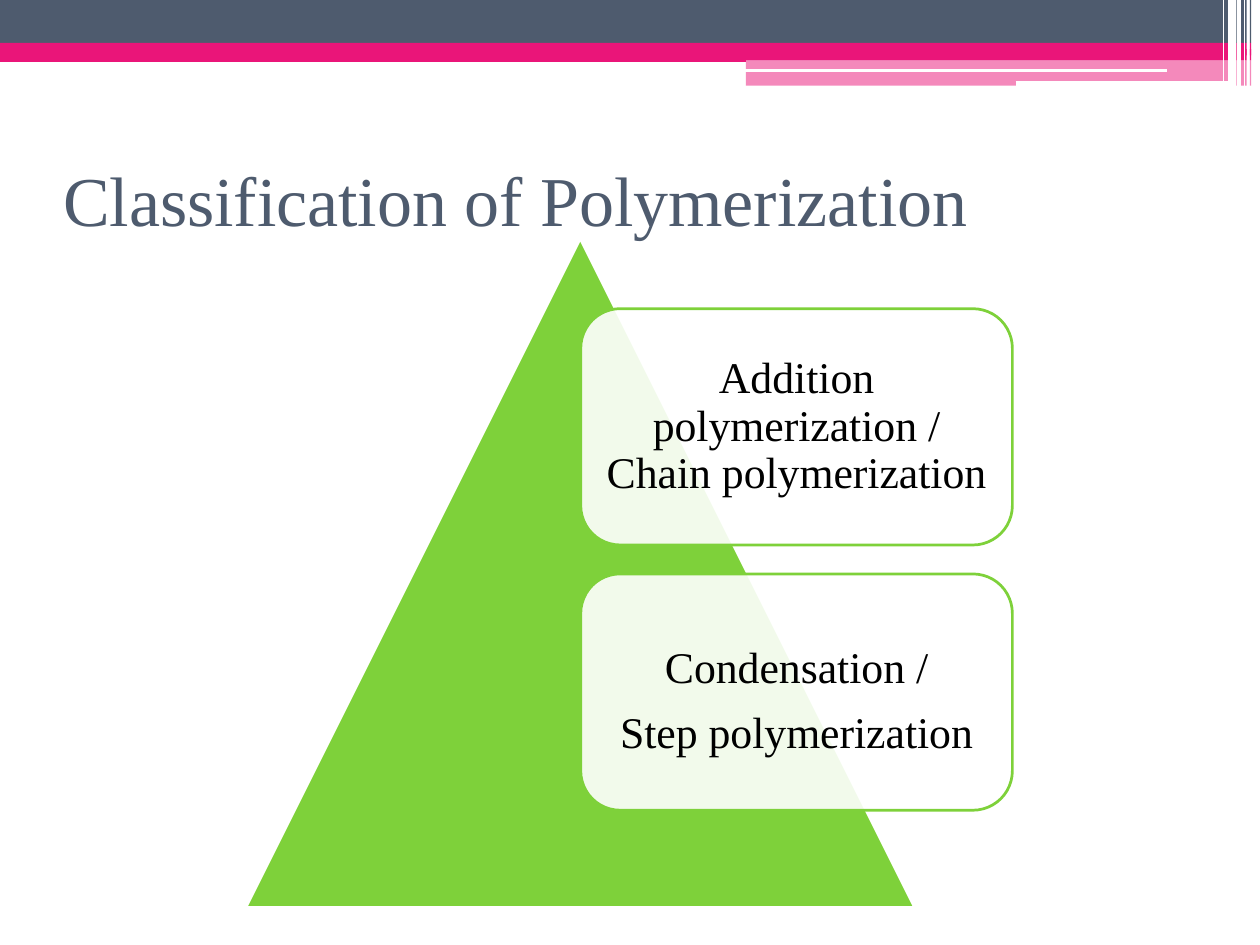
from lxml import etree
from pptx import Presentation
from pptx.dml.color import RGBColor
from pptx.enum.shapes import MSO_CONNECTOR, MSO_SHAPE
from pptx.enum.text import MSO_ANCHOR, MSO_AUTO_SIZE, PP_ALIGN
from pptx.oxml.ns import qn
from pptx.util import Inches, Pt

RECTANGLE = MSO_SHAPE.RECTANGLE
TRIANGLE = MSO_SHAPE.ISOSCELES_TRIANGLE
ROUNDED = MSO_SHAPE.ROUNDED_RECTANGLE
STRAIGHT = MSO_CONNECTOR.STRAIGHT
MIDDLE, BOTTOM = MSO_ANCHOR.MIDDLE, MSO_ANCHOR.BOTTOM
LEFT, CENTER = PP_ALIGN.LEFT, PP_ALIGN.CENTER
NO_AUTOSIZE = MSO_AUTO_SIZE.NONE

COLUMNS, ROWS = 1000, 750


def color(value):
    return RGBColor.from_string(value)


class PolymerPage:
    font = "Times New Roman"
    navy, pink, green, white, black = "4E5B6E", "EA1579", "7ED13A", "FFFFFF", "000000"

    def __init__(self, deck):
        self.column = deck.slide_width / COLUMNS
        self.row = deck.slide_height / ROWS
        self.page = deck.slides.add_slide(deck.slide_layouts[5])

    def place(self, left, top, width, height):
        return (round(left * self.column), round(top * self.row),
                round(width * self.column), round(height * self.row))

    def set_text(self, frame, text, size, ink, align, anchor, spacing, margin=0):
        frame.text = text
        frame.word_wrap = True
        frame.auto_size = NO_AUTOSIZE
        frame.vertical_anchor = anchor
        frame.margin_left = frame.margin_right = Inches(margin)
        frame.margin_top = frame.margin_bottom = 0
        for para in frame.paragraphs:
            para.alignment = align
            para.line_spacing = spacing
            for span in para.runs:
                span.font.name = self.font
                span.font.size = Pt(size)
                span.font.color.rgb = color(ink)

    def title(self, text, left, top, width, height):
        box = self.page.shapes.title
        box.left, box.top, box.width, box.height = self.place(left, top, width, height)
        self.set_text(box.text_frame, text, 40, self.navy, LEFT, BOTTOM, 1.0)

    def shape(self, kind, left, top, width, height, fill, opacity=100):
        box = self.page.shapes.add_shape(kind, *self.place(left, top, width, height))
        box.shadow.inherit = False
        box.fill.solid()
        box.fill.fore_color.rgb = color(fill)
        box.line.fill.background()
        if opacity < 100:
            paint = box._element.spPr.find(qn("a:solidFill"))[0]
            etree.SubElement(paint, qn("a:alpha"), val=str(opacity * 1000))
        return box

    def band(self, strips, top, height, fill, opacity=100):
        for left, width in strips:
            self.shape(RECTANGLE, left, top, width, height, fill, opacity)

    def line(self, left, top, right, bottom, ink, weight):
        start_x, start_y, end_x, end_y = self.place(left, top, right, bottom)
        rule = self.page.shapes.add_connector(STRAIGHT, start_x, start_y, end_x, end_y)
        rule.line.color.rgb = color(ink)
        rule.line.width = Pt(weight)
        etree.SubElement(rule._element.spPr, qn("a:effectLst"))

    def card(self, text, left, top, width, height, spacing):
        box = self.shape(ROUNDED, left, top, width, height, self.white, 90)
        box.line.color.rgb = color(self.green)
        box.line.width = Pt(1.56)
        self.set_text(box.text_frame, text, 25, self.black, CENTER, MIDDLE, spacing, 0.1)


def main():
    deck = Presentation()
    deck.slide_width, deck.slide_height = Inches(10), Inches(7.5)
    slide = PolymerPage(deck)

    slide.line(0, 46, 592, 46, slide.pink, 4.08)
    edge = [(985, 4.5), (992, 1)]
    sliver = [(981, 0.5)]
    slide.band([(0, 975)] + sliver + edge, 0, 34, slide.navy)
    slide.band([(0, 975)] + edge, 34, 10, slide.pink)
    slide.band(sliver, 34, 14, slide.pink)
    slide.band([(592, 383)] + edge, 39, 9, slide.pink)
    slide.band([(592, 389.5)] + edge, 48, 20, slide.pink, 50)

    slide.line(591, 56, 926, 56, slide.white, 2.16)
    slide.line(806, 66, 981, 66, slide.white, 2.88)
    for column, bottom, weight in [(988, 68, 0.72), (978, 64, 4.32), (971, 64, 0.72)]:
        slide.line(column, 0, column, bottom, slide.white, weight)

    slide.title("Classification of Polymerization", 50, 122, 722, 69)
    slide.shape(TRIANGLE, 197, 192, 527, 527, slide.green)

    cards = [("Addition polymerization / Chain polymerization", 0.9),
             ("Condensation /\vStep polymerization", 1.25)]
    for index, (text, spacing) in enumerate(cards):
        slide.card(text, 461, 245 + index * 210.5, 342.5, 187.5, spacing)

    deck.save("out.pptx")


if __name__ == "__main__":
    main()
